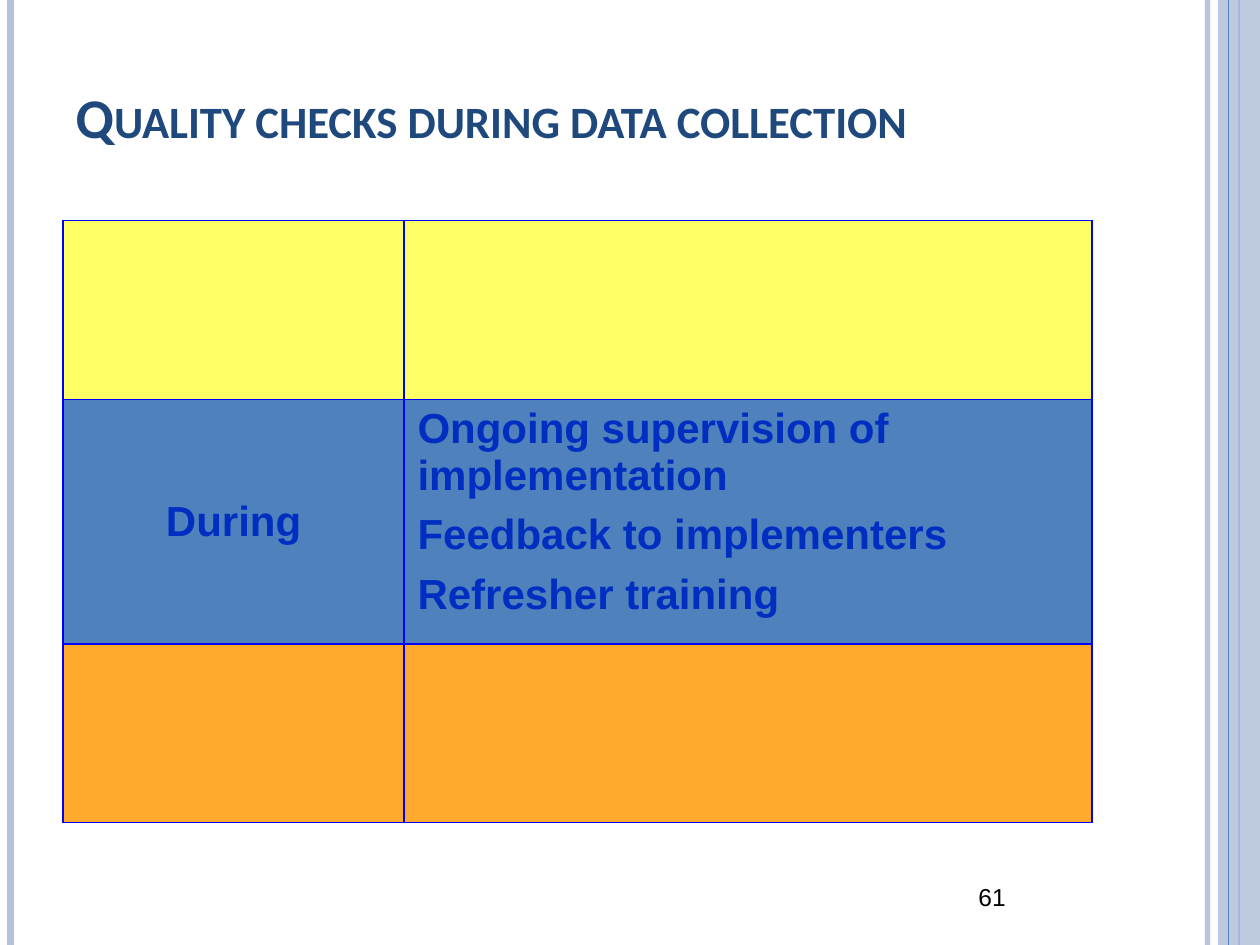
from dataclasses import dataclass

from lxml import etree
from pptx import Presentation
from pptx.dml.color import RGBColor
from pptx.enum.shapes import MSO_CONNECTOR, MSO_SHAPE
from pptx.enum.text import MSO_ANCHOR, MSO_AUTO_SIZE, PP_ALIGN
from pptx.oxml.ns import qn
from pptx.util import Pt

STRAIGHT = MSO_CONNECTOR.STRAIGHT
RECTANGLE = MSO_SHAPE.RECTANGLE
TOP, MIDDLE = MSO_ANCHOR.TOP, MSO_ANCHOR.MIDDLE
LEFT, CENTER = PP_ALIGN.LEFT, PP_ALIGN.CENTER
PAGE_WIDTH, PAGE_HEIGHT = 720, 540
PALE_BLUE, BLUE = "B3C1DB", "4F81BD"
TITLE_ONLY = 5


@dataclass
class Stripe:
    x: float
    weight: float
    color: str
    opacity: int = 100


@dataclass
class CheckRow:
    height: float
    fill: str
    stage: str = ""
    checks: tuple[str, ...] = ()


BACK_STRIPES = [
    Stripe(690, 3, PALE_BLUE, 93),
    Stripe(6, 4.5, PALE_BLUE),
    Stripe(708, 1.5, BLUE),
]
FRONT_STRIPE = Stripe(702, 0.75, BLUE)
COLUMN_WIDTHS = [195, 393]
CHECK_ROWS = [
    CheckRow(102.2, "FFFF66"),
    CheckRow(139.7, BLUE, "During", (
        "Ongoing supervision of implementation",
        "Feedback to implementers",
        "Refresher training",
    )),
    CheckRow(102.2, "FFAA2D"),
]


def rgb(color: str) -> RGBColor:
    return RGBColor.from_string(color)


def set_opacity(fill_parent, percent: int) -> None:
    color = fill_parent.find(f".//{qn('a:srgbClr')}")
    etree.SubElement(color, qn("a:alpha")).set("val", str(percent * 1000))


def add_span(para, text: str, font: str, size: float, color: str, bold: bool = False):
    span = para.add_run()
    span.text = text
    span.font.name = font
    span.font.size = Pt(size)
    span.font.bold = bold
    span.font.color.rgb = rgb(color)
    return span


def draw_stripe(page, stripe: Stripe) -> None:
    line = page.shapes.add_connector(
        STRAIGHT, Pt(stripe.x), Pt(0), Pt(stripe.x), Pt(PAGE_HEIGHT))
    line.line.color.rgb = rgb(stripe.color)
    line.line.width = Pt(stripe.weight)
    properties = line._element.spPr
    if stripe.opacity < 100:
        set_opacity(properties, stripe.opacity)
    etree.SubElement(properties, qn("a:effectLst"))


def draw_side_band(page) -> None:
    band = page.shapes.add_shape(RECTANGLE, Pt(696), Pt(0), Pt(24), Pt(PAGE_HEIGHT))
    band.shadow.inherit = False
    band.fill.solid()
    band.fill.fore_color.rgb = rgb(PALE_BLUE)
    band.line.fill.background()
    set_opacity(band._element.spPr, 87)


def fill_title(page, text: str) -> None:
    title = page.shapes.title
    title.left, title.top, title.width, title.height = Pt(36), Pt(21.6), Pt(588), Pt(90)
    frame = title.text_frame
    frame.auto_size = MSO_AUTO_SIZE.NONE
    frame.word_wrap = True
    frame.vertical_anchor = MIDDLE
    para = frame.paragraphs[0]
    para.alignment = LEFT
    span = add_span(para, text, "Calibri", 32, "1F497D", True)
    span.font._element.set("cap", "small")


def style_cell(cell, fill: str) -> None:
    properties = cell._tc.get_or_add_tcPr()
    for side in ("a:lnL", "a:lnR", "a:lnT", "a:lnB"):
        border = etree.SubElement(properties, qn(side), w=str(Pt(1)))
        solid = etree.SubElement(border, qn("a:solidFill"))
        etree.SubElement(solid, qn("a:srgbClr"), val="0000FF")
    cell.fill.solid()
    cell.fill.fore_color.rgb = rgb(fill)
    cell.margin_left = cell.margin_right = Pt(7.6)
    cell.margin_top = cell.margin_bottom = Pt(3.6)


def write_cell(cell, texts: tuple[str, ...], alignment, anchor) -> None:
    cell.vertical_anchor = anchor
    frame = cell.text_frame
    for index, text in enumerate(texts):
        para = frame.add_paragraph() if index else frame.paragraphs[0]
        para.alignment = alignment
        para.space_before = Pt(2.4 if index else 0)
        para.space_after = Pt(4.8)
        add_span(para, text, "Arial", 24, "002EC0", True)


def draw_checks(page) -> None:
    height = sum(row.height for row in CHECK_ROWS)
    table = page.shapes.add_table(
        len(CHECK_ROWS), len(COLUMN_WIDTHS),
        Pt(36), Pt(126), Pt(sum(COLUMN_WIDTHS)), Pt(height)).table
    table.first_row = table.horz_banding = False
    for column, width in zip(table.columns, COLUMN_WIDTHS):
        column.width = Pt(width)
    for row, check_row in zip(table.rows, CHECK_ROWS):
        row.height = Pt(check_row.height)
        stage_cell, checks_cell = row.cells
        for cell in (stage_cell, checks_cell):
            style_cell(cell, check_row.fill)
        if check_row.stage:
            write_cell(stage_cell, (check_row.stage,), CENTER, MIDDLE)
            write_cell(checks_cell, check_row.checks, LEFT, TOP)


def draw_page_number(page, number: str) -> None:
    box = page.shapes.add_textbox(Pt(552), Pt(500.4), Pt(168), Pt(28.8))
    box.text_frame.word_wrap = True
    add_span(box.text_frame.paragraphs[0], number, "Arial", 14, "000000")


def main() -> None:
    deck = Presentation()
    deck.slide_width, deck.slide_height = Pt(PAGE_WIDTH), Pt(PAGE_HEIGHT)
    page = deck.slides.add_slide(deck.slide_layouts[TITLE_ONLY])
    page.background.fill.solid()
    page.background.fill.fore_color.rgb = rgb("FFFFFF")
    for stripe in BACK_STRIPES:
        draw_stripe(page, stripe)
    draw_side_band(page)
    draw_stripe(page, FRONT_STRIPE)
    fill_title(page, "Quality checks during data collection")
    draw_checks(page)
    draw_page_number(page, "61")
    deck.save("out.pptx")


if __name__ == "__main__":
    main()
